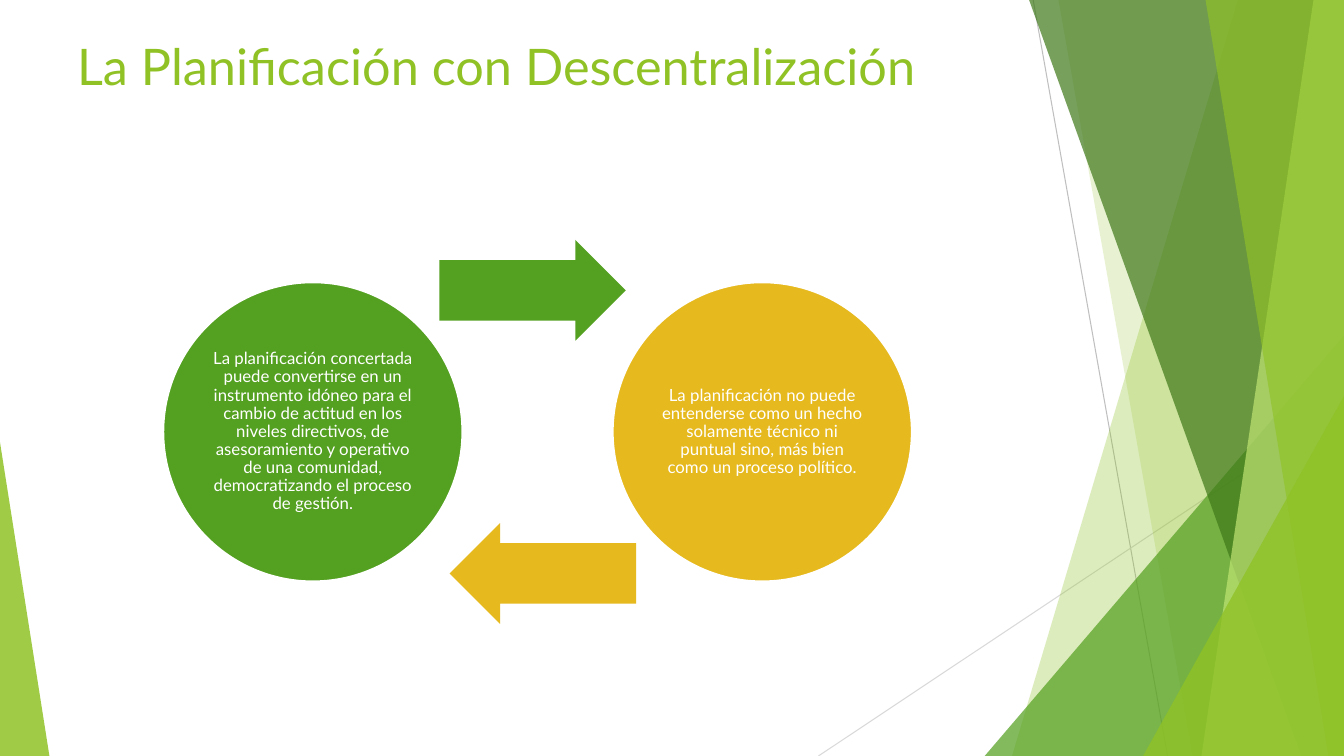
from lxml import etree
from pptx import Presentation
from pptx.dml.color import RGBColor
from pptx.enum.shapes import MSO_CONNECTOR, MSO_SHAPE
from pptx.enum.text import MSO_ANCHOR, PP_ALIGN
from pptx.oxml.ns import qn
from pptx.util import Pt

STRAIGHT = MSO_CONNECTOR.STRAIGHT
TRIANGLE, CIRCLE, ARROW = (
    MSO_SHAPE.ISOSCELES_TRIANGLE, MSO_SHAPE.OVAL, MSO_SHAPE.RIGHT_ARROW)
TOP, MIDDLE = MSO_ANCHOR.TOP, MSO_ANCHOR.MIDDLE
LEFT, CENTER = PP_ALIGN.LEFT, PP_ALIGN.CENTER

FONT = "Lato"
SLIDE_W, SLIDE_H = 960, 540
COLORS = {
    "lime": "90C226", "pale_lime": "C0E474", "green": "54A021",
    "dark_green": "3F7819", "gold": "E6B91E", "white": "FFFFFF",
    "gray": "BFBFBF", "light_gray": "D9D9D9",
}

CIRCLE_SIZE, CIRCLE_TOP = 213.8, 201.6
ARROW_W, ARROW_H, ARROW_OFFSET = 133.2, 72, 101.1
CYCLE = [
    # circle left, arrow left, arrow side (-1 above, 1 below), rotation, color, text
    (116.6, 313.8, -1, 0, "green",
     "La planificación concertada puede convertirse en un instrumento idóneo "
     "para el cambio de actitud en los niveles directivos, de asesoramiento y "
     "operativo de una comunidad, democratizando el proceso de gestión."),
    (437.6, 321.2, 1, 180, "gold",
     "La planificación no puede entenderse como un hecho solamente técnico ni "
     "puntual sino, más bien como un proceso político."),
]


def rgb(color):
    return RGBColor.from_string(COLORS[color])


def paint(shape, color, opacity=100):
    """Fill a shape without outline or shadow; opacity is in percent."""
    shape.shadow.inherit = False
    shape.line.fill.background()
    shape.fill.solid()
    shape.fill.fore_color.rgb = rgb(color)
    if opacity < 100:
        srgb = shape._element.spPr.find(qn("a:solidFill")).find(qn("a:srgbClr"))
        etree.SubElement(srgb, qn("a:alpha")).set("val", str(opacity * 1000))


def add_preset(slide, kind, left, top, width, height, color, opacity=100, adjust=()):
    shape = slide.shapes.add_shape(kind, Pt(left), Pt(top), Pt(width), Pt(height))
    for index, value in enumerate(adjust):
        shape.adjustments[index] = value
    paint(shape, color, opacity)
    return shape


def add_ray(slide, start, end, color):
    ray = slide.shapes.add_connector(STRAIGHT, *(Pt(v) for v in (*start, *end)))
    ray.line.color.rgb = rgb(color)
    ray.line.width = Pt(0.75)
    etree.SubElement(ray._element.spPr, qn("a:effectLst"))


def add_band(slide, top_x, bottom_x, color, opacity):
    """Fill from a slanted left edge to the right edge of the slide."""
    outline = slide.shapes.build_freeform(Pt(top_x), 0)
    corners = [(SLIDE_W, 0), (SLIDE_W, SLIDE_H), (bottom_x, SLIDE_H)]
    outline.add_line_segments([(Pt(x), Pt(y)) for x, y in corners])
    paint(outline.convert_to_shape(), color, opacity)


def add_corner(slide, left, top, width, apex, color, opacity):
    """Right triangle standing on the bottom edge of the slide."""
    add_preset(slide, TRIANGLE, left, top, width, SLIDE_H - top,
               color, opacity, [apex])


def write(shape, text, size, color, align, anchor):
    frame = shape.text_frame
    frame.word_wrap = True
    frame.vertical_anchor = anchor
    frame.text = text
    paragraph = frame.paragraphs[0]
    paragraph.alignment = align
    paragraph.font.name = FONT
    paragraph.font.size = Pt(size)
    paragraph.font.color.rgb = rgb(color)


def add_facets(slide):
    add_ray(slide, (738, 0), (834, SLIDE_H), "gray")
    add_ray(slide, (SLIDE_W, 290), (584.6, SLIDE_H), "light_gray")
    add_band(slide, 884.2, 722.9, "lime", 30)
    add_band(slide, 756, 851.8, "lime", 20)
    add_corner(slide, 703.4, 239.8, SLIDE_W - 703.4, 1, "green", 72)
    add_band(slide, 735.1, 929.5, "dark_green", 70)
    add_band(slide, 938.2, 858.2, "pale_lime", 70)
    add_band(slide, 861.1, 949, "lime", 65)
    add_corner(slide, 816.5, 283, SLIDE_W - 816.5, 1, "lime", 80)
    add_corner(slide, 0, 316, 35.3, 0, "lime", 85)


def add_title(slide, text):
    title = slide.shapes.add_textbox(Pt(48), Pt(21.6), Pt(864), Pt(90))
    write(title, text, 36, "lime", LEFT, TOP)


def add_idea(slide, left, color, text):
    circle = add_preset(slide, CIRCLE, left, CIRCLE_TOP,
                        CIRCLE_SIZE, CIRCLE_SIZE, color)
    circle.line.color.rgb = rgb("white")
    circle.line.width = Pt(1.5)
    frame = circle.text_frame
    frame.margin_left = frame.margin_right = Pt(1.2)
    frame.margin_top = frame.margin_bottom = Pt(1.2)
    write(circle, text, 12, "white", CENTER, MIDDLE)
    frame.paragraphs[0].line_spacing = 0.9


def add_cycle(slide):
    middle = CIRCLE_TOP + CIRCLE_SIZE / 2
    for circle_left, arrow_left, side, rotation, color, text in CYCLE:
        add_idea(slide, circle_left, color, text)
        arrow_top = middle + side * ARROW_OFFSET - ARROW_H / 2
        arrow = add_preset(slide, ARROW, arrow_left, arrow_top,
                           ARROW_W, ARROW_H, color, adjust=[0.6, 0.5])
        arrow.rotation = rotation


def main():
    deck = Presentation()
    deck.slide_width, deck.slide_height = Pt(SLIDE_W), Pt(SLIDE_H)
    slide = deck.slides.add_slide(deck.slide_layouts[6])
    add_facets(slide)
    add_title(slide, "La Planificación con Descentralización")
    add_cycle(slide)
    deck.save("out.pptx")


if __name__ == "__main__":
    main()
